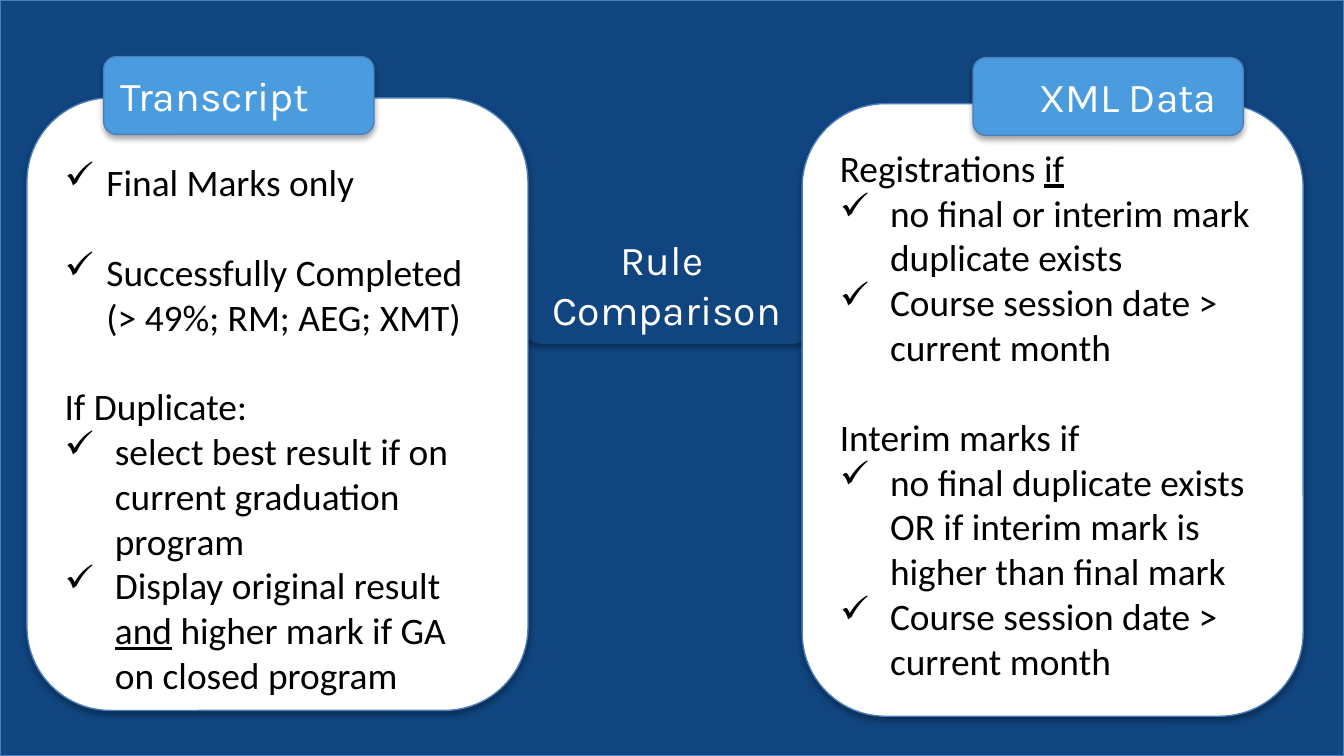
"""Build a slide that compares the transcript rules with the XML data rules."""
import pptx
import pptx.dml.color
import pptx.enum.shapes
import pptx.enum.text
import pptx.oxml.ns
import pptx.util
from lxml import etree

Cm, Pt = pptx.util.Cm, pptx.util.Pt
KIND = pptx.enum.shapes.MSO_SHAPE
ALIGN = pptx.enum.text.PP_ALIGN
ANCHOR = pptx.enum.text.MSO_ANCHOR
HUES = {"navy": "10457F", "sky": "4A9CDE", "edge": "4B7EBC",
        "white": "FFFFFF", "black": "000000"}


def add_box(kind, spot, fill, edge=True):
    box = slide.shapes.add_shape(kind, *[Cm(n) for n in spot])
    box.fill.solid()
    box.fill.fore_color.rgb = pptx.dml.color.RGBColor.from_string(HUES[fill])
    if edge:
        box.line.color.rgb = pptx.dml.color.RGBColor.from_string(HUES["edge"])
        box.line.width = Pt(0.75)
    else:
        box.line.fill.background()
    box.text_frame.word_wrap = True
    return box


def style(run, face, size, hue):
    run.font.name = face
    run.font.size = Pt(size)
    run.font.color.rgb = pptx.dml.color.RGBColor.from_string(HUES[hue])


deck = pptx.Presentation()
deck.slide_width, deck.slide_height = Cm(25.4), Cm(14.29)
slide = deck.slides.add_slide(deck.slide_layouts[6])

add_box(KIND.RECTANGLE, (0, 0, 25.4, 14.29), "navy")
heads = [
    ((9.86, 4.24, 5.49, 2.26), "navy", False, ALIGN.CENTER, "Rule \nComparison"),
    ((1.96, 1.07, 5.11, 1.47), "sky", True, ALIGN.LEFT, "Transcript"),
    ((18.39, 1.09, 5.11, 1.47), "sky", True, ALIGN.RIGHT, "XML Data "),
]

# Each rule: indent, space before, text parts with every second one underlined
panels = [
    ((0.51, 1.85, 9.47, 11.58), 0.7, [
        (0.79, 0, ["Final Marks only"]),
        (0.79, 24, ["Successfully Completed \v(> 49%; RM; AEG; XMT)"]),
        (0, 24, ["If Duplicate:"]),
        (0.95, 0, ["select best result if on current graduation program"]),
        (0.95, 0, ["Display original result ", "and",
                   " higher mark if GA on closed program"]),
    ]),
    ((15.16, 1.96, 9.47, 11.58), 0.32, [
        (0, 0, ["Registrations ", "if"]),
        (0.95, 0, ["no final or interim mark duplicate exists"]),
        (0.95, 0, ["Course session date > current month"]),
        (0, 24, ["Interim marks if"]),
        (0.95, 0, ["no final duplicate exists OR if interim mark is "
                   "higher than final mark"]),
        (0.95, 0, ["Course session date > current month"]),
    ]),
]


def add_head(spot, fill, edge, align, text):
    frame = add_box(KIND.ROUNDED_RECTANGLE, spot, fill, edge).text_frame
    frame.text = text
    frame.vertical_anchor = ANCHOR.MIDDLE
    for para in frame.paragraphs:
        para.alignment = align
        style(para.runs[0], "Karla", 22, "white")


add_head(*heads[0])
for spot, top, rules in panels:
    frame = add_box(KIND.ROUNDED_RECTANGLE, spot, "white").text_frame
    frame.vertical_anchor = ANCHOR.TOP
    frame.margin_top = Cm(top)
    for i, (indent, gap, parts) in enumerate(rules):
        para = frame.add_paragraph() if i else frame.paragraphs[0]
        para.text = parts[0]
        para.alignment = ALIGN.LEFT
        if gap:
            para.space_before = Pt(gap)
        if indent:
            props = para._p.get_or_add_pPr()
            props.set("marL", str(Cm(indent)))
            props.set("indent", str(-Cm(indent)))
            mark = etree.SubElement(props, pptx.oxml.ns.qn("a:buChar"))
            mark.set("char", "✓")
        for part in parts[1:]:
            para.add_run().text = part
        for j, run in enumerate(para.runs):
            style(run, "Calibri", 20, "black")
            if len(parts) > 1 and j == 1:
                run.font.underline = True
for head in heads[1:]:
    add_head(*head)

deck.save("out.pptx")
